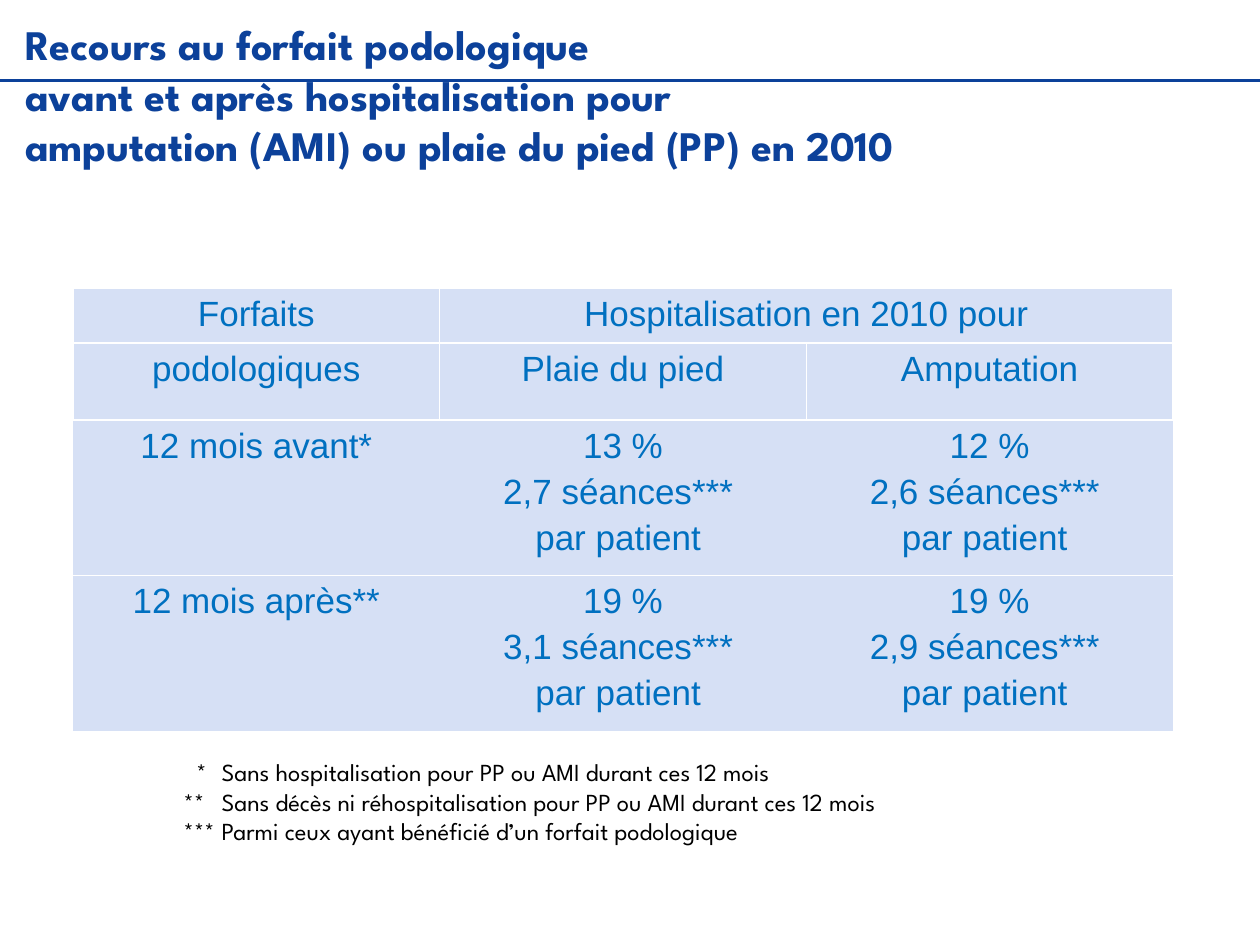
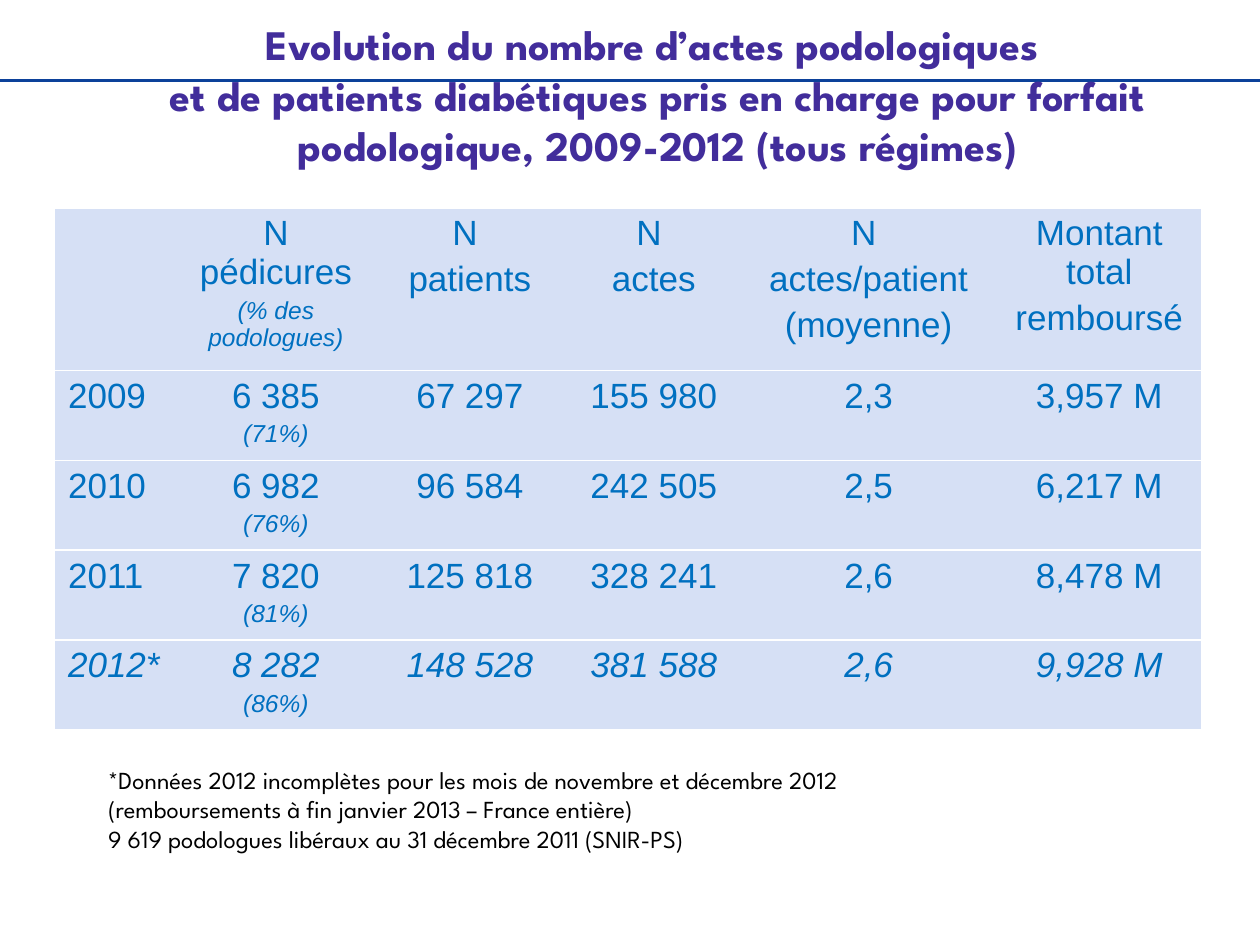
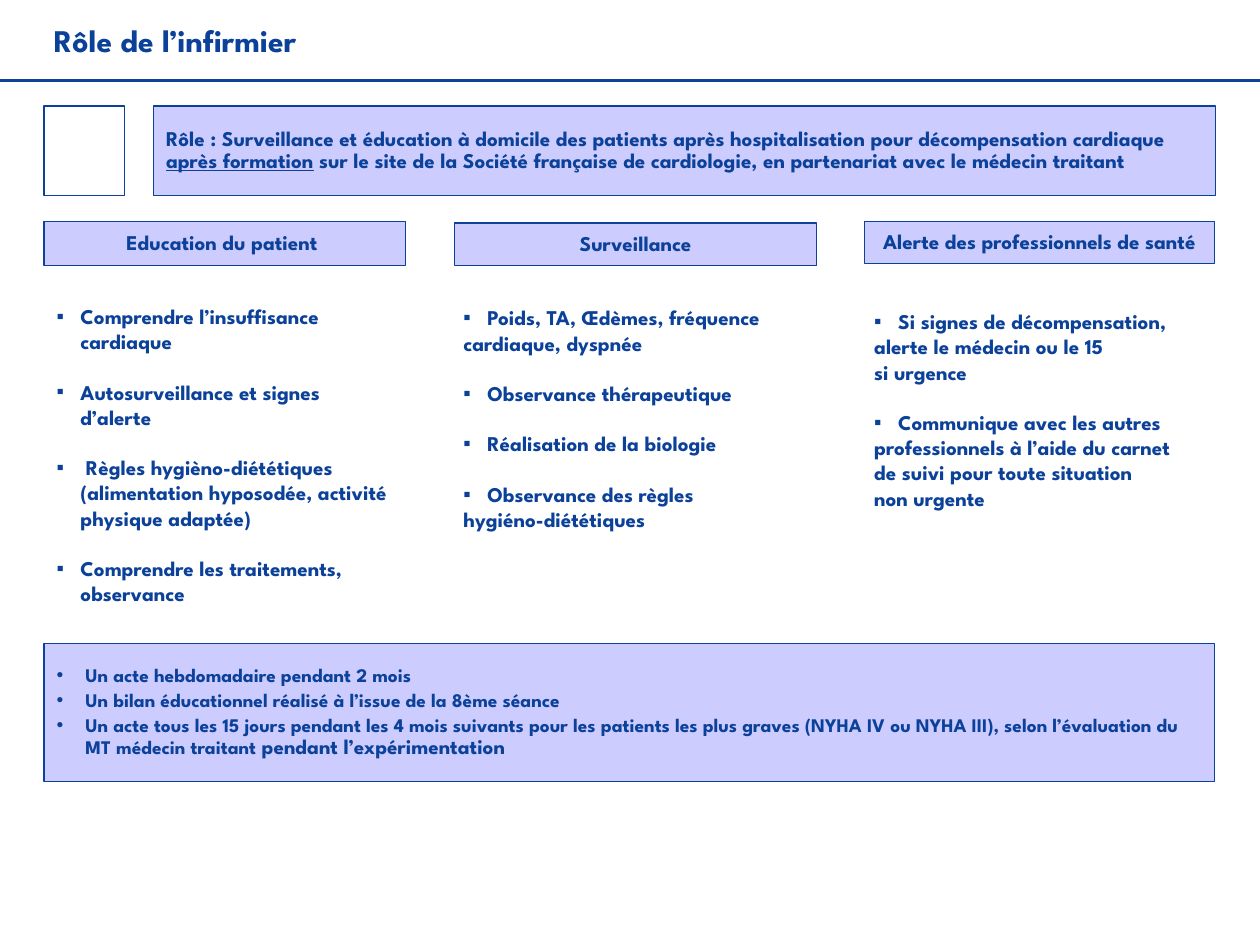
from dataclasses import dataclass, field

from lxml.etree import SubElement
from pptx import Presentation
from pptx.dml.color import RGBColor as Color
from pptx.enum.shapes import MSO_CONNECTOR as Connector
from pptx.enum.shapes import MSO_SHAPE as Preset
from pptx.enum.text import MSO_ANCHOR as Anchor
from pptx.enum.text import PP_ALIGN as Align
from pptx.oxml.ns import qn
from pptx.util import Inches, Pt

COLUMNS, ROWS = 100, 75
NO_GRID_STYLE = "{2D5ABB26-0587-4C30-8999-92F81FD0307C}"


@dataclass(frozen=True)
class Theme:
    navy: Color = Color.from_string("0C419A")
    violet: Color = Color.from_string("422D9B")
    blue: Color = Color.from_string("0070C0")
    pale: Color = Color.from_string("D6E0F5")
    lilac: Color = Color.from_string("CCCCFF")
    white: Color = Color.from_string("FFFFFF")
    black: Color = Color.from_string("000000")
    text_font: str = "League Spartan"
    table_font: str = "Arial"
    title: int = 24
    cell: int = 20
    heading: int = 18
    note: int = 14
    body: int = 12
    detail: int = 11


THEME = Theme()


@dataclass
class Line:
    runs: list
    format: dict = field(default_factory=dict)
    font: dict = field(default_factory=dict)
    indent: tuple = None
    bullet: str = None


def set_values(target, values):
    for name, value in values.items():
        setattr(target, name, value)


def font_style(size, color, name=THEME.text_font, **extra):
    return {"size": Pt(size), "name": name, "color": color, **extra}


BODY = font_style(THEME.body, THEME.navy, bold=True)
NOTE = font_style(THEME.note, THEME.black)
CELL = font_style(THEME.cell, THEME.blue, THEME.table_font)
SMALL = {"size": Pt(THEME.note), "italic": True}


class Deck:
    def __init__(self, theme):
        self.theme = theme
        self.presentation = Presentation()
        set_values(self.presentation, {"slide_width": Inches(10), "slide_height": Inches(7.5)})
        self.slide = None

    def across(self, columns):
        return round(self.presentation.slide_width * columns / COLUMNS)

    def down(self, rows):
        return round(self.presentation.slide_height * rows / ROWS)

    def place(self, left, top, width, height):
        return self.across(left), self.down(top), self.across(width), self.down(height)

    def new_slide(self):
        self.slide = self.presentation.slides.add_slide(self.presentation.slide_layouts[6])
        height = self.down(6.4)
        rule = self.slide.shapes.add_connector(Connector.STRAIGHT, 0, height, self.across(COLUMNS), height)
        rule.line.color.rgb = self.theme.navy
        rule.line.width = Pt(1.5)
        SubElement(rule._element.spPr, qn("a:effectLst"))

    def add_lines(self, frame, lines, style):
        for index, line in enumerate(lines):
            paragraph = frame.add_paragraph() if index else frame.paragraphs[0]
            set_values(paragraph, line.format)
            if line.indent:
                self.set_indent(paragraph, *line.indent, line.bullet)
            for text, change in line.runs:
                self.add_run(paragraph, text, {**style, **line.font, **change})

    def set_indent(self, paragraph, margin, first, bullet):
        properties = paragraph._p.get_or_add_pPr()
        properties.set("marL", str(self.across(margin)))
        properties.set("indent", str(self.across(first)))
        if bullet:
            SubElement(properties, qn("a:buFont")).set("typeface", self.theme.table_font)
            SubElement(properties, qn("a:buChar")).set("char", bullet)
        else:
            tabs = SubElement(properties, qn("a:tabLst"))
            stop = SubElement(tabs, qn("a:tab"))
            stop.set("pos", str(self.across(margin)))
            stop.set("algn", "l")

    def add_run(self, paragraph, text, style):
        for index, piece in enumerate(text.split("\n")):
            if index:
                paragraph.add_line_break()
            run = paragraph.add_run()
            run.text = piece
            set_values(run.font, {name: value for name, value in style.items() if name != "color"})
            run.font.color.rgb = style["color"]

    def text(self, box, lines, style, anchor=Anchor.TOP):
        shape = self.slide.shapes.add_textbox(*self.place(*box))
        set_values(shape.text_frame, {"word_wrap": True, "vertical_anchor": anchor})
        self.add_lines(shape.text_frame, lines, style)

    def panel(self, box, fill, lines=(), style=BODY):
        shape = self.slide.shapes.add_shape(Preset.RECTANGLE, *self.place(*box))
        shape.shadow.inherit = False
        shape.fill.solid()
        shape.fill.fore_color.rgb = fill
        shape.line.color.rgb = self.theme.navy
        shape.line.width = Pt(0.75)
        set_values(shape.text_frame, {"word_wrap": True, "vertical_anchor": Anchor.MIDDLE})
        self.add_lines(shape.text_frame, lines, style)

    def table(self, box, widths, heights, rows, borders):
        table = self.slide.shapes.add_table(len(rows), len(widths), *self.place(*box)).table
        set_values(table, {"first_row": False, "horz_banding": False})
        table._tbl.tblPr.find(qn("a:tableStyleId")).text = NO_GRID_STYLE
        for column, width in zip(table.columns, widths):
            column.width = self.across(width)
        for row, height in zip(table.rows, heights):
            row.height = self.down(height)
        for row_index, row in enumerate(rows):
            for column_index, lines in enumerate(row):
                cell = table.cell(row_index, column_index)
                self.add_borders(cell, borders[row_index])
                cell.fill.solid()
                cell.fill.fore_color.rgb = self.theme.pale
                self.add_lines(cell.text_frame, lines, CELL)
        return table

    def add_borders(self, cell, sides):
        properties = cell._tc.get_or_add_tcPr()
        for side in sides:
            border = SubElement(properties, qn(f"a:ln{side}"))
            border.set("w", str(int(Pt(1))))
            fill = SubElement(border, qn("a:solidFill"))
            SubElement(fill, qn("a:srgbClr")).set("val", str(self.theme.white))


def plain(text, **options):
    return Line([(text, {})], **options)


def cell_line(text, align=Align.CENTER, **font):
    size = font.get("size", CELL["size"])
    return plain(text, format={"alignment": align, "space_before": Pt(size.pt * 0.2)}, font=font)


def cell_lines(text):
    return [cell_line(part) for part in text.split("\n")] if text else []


def panel_line(*runs, align=Align.LEFT, **options):
    spacing = {"alignment": align, "line_spacing": 0.9, "space_before": Pt(THEME.body * 0.2)}
    return Line(list(runs), format=spacing, **options)


def bullet_lines(items):
    lines = []
    for index, item in enumerate(items):
        first, *others = item.split("\n")
        gap = {"space_before": Pt(THEME.body * 1.2)} if index else {}
        lines.append(plain(first, format=gap, indent=(1.9, -1.9), bullet="▪"))
        lines += [plain(other) for other in others]
    return lines


def build_package_use(deck):
    deck.new_slide()
    title = ("Recours au forfait podologique \navant et après hospitalisation pour \n"
             "amputation (AMI) ou plaie du pied (PP) en 2010")
    deck.text((1, 1, 98.9, 15.8), [plain(title)], font_style(THEME.title, THEME.navy, bold=True))
    content = [
        ["Forfaits", "Hospitalisation en 2010 pour", ""],
        ["podologiques", "Plaie du pied", "Amputation"],
        ["12 mois avant*", "13 %\n2,7 séances*** \npar patient ", "12 %\n2,6 séances*** \npar patient "],
        ["12 mois après**", "19 %\n3,1 séances*** \npar patient ", "19 %\n2,9 séances*** \npar patient "],
    ]
    rows = [[cell_lines(text) for text in row] for row in content]
    table = deck.table((5.8, 22.9, 87.3, 35.1), [29.1] * 3, [4.3, 6.1, 12.35, 12.35], rows,
                       ["LRTB", "LRTB", "T", ""])
    table.cell(0, 1).merge(table.cell(0, 2))
    notes = [
        ("*", "Sans hospitalisation pour PP ou AMI durant ces 12 mois", -2),
        ("**", "Sans décès ni réhospitalisation pour PP ou AMI durant ces 12 mois", -3),
        ("***", "Parmi ceux ayant bénéficié d’un forfait podologique", -3),
    ]
    lines = [plain(f"{mark}\t{note}", indent=(3, first)) for mark, note, first in notes]
    deck.text((13.6, 59.6, 79.5, 12.8), lines, NOTE)


def build_yearly_acts(deck):
    deck.new_slide()
    title = ("Evolution du nombre d’actes podologiques \net de patients diabétiques pris en charge "
             "pour forfait podologique, 2009-2012 (tous régimes)")
    deck.text((4.4, -4, 95.6, 23), [plain(title, format={"alignment": Align.CENTER})],
              font_style(THEME.title, THEME.violet, bold=True), Anchor.MIDDLE)
    headings = ["", "N pédicures\n(% des podologues)", "N \npatients", "N \nactes",
                "N \nactes/patient\n(moyenne)", "Montant total\nremboursé"]
    years = [
        ["2009", "6 385\n(71%)", "67 297", "155 980", "2,3", "3,957 M"],
        ["2010", "6 982\n(76%)", "96 584", "242 505", "2,5", "6,217 M"],
        ["2011", "7 820\n(81%)", "125 818", "328 241", "2,6", "8,478 M"],
        ["2012*", "8 282\n(86%)", "148 528", "381 588", "2,6", "9,928 M"],
    ]
    rows = []
    for values in [headings, *years]:
        year, pedicures, *others = values
        count, share = pedicures.split("\n")
        style = {"italic": True} if year.endswith("*") else {}
        rows.append([
            [cell_line(year, Align.LEFT, **style)] if year else [],
            [cell_line(count, **style), cell_line(share, **SMALL)],
            *[[cell_line(part, **style) for part in text.split("\n")] for text in others],
        ])
    deck.table((4.4, 16.5, 90.9, 41.4), [9.9, 15.2, 15.6, 13.6, 20.5, 16.1],
               [12.9] + [7.13] * 4, rows, ["TB"] * 5)
    notes = ["*Données 2012 incomplètes pour les mois de novembre et décembre 2012",
             "(remboursements à fin janvier 2013 – France entière)",
             "9 619 podologues libéraux au 31 décembre 2011 (SNIR-PS)"]
    deck.text((7.6, 60.2, 80.2, 10.4), [plain(note) for note in notes], NOTE)


def build_nurse_role(deck):
    deck.new_slide()
    deck.text((3.3, 1.2, 93.4, 4), [plain("Rôle de l’infirmier")],
              font_style(THEME.heading, THEME.navy, bold=True))
    deck.panel((3.5, 8.4, 6.4, 7.1), THEME.white)
    role = panel_line(
        ("Rôle : Surveillance et éducation à domicile des patients après hospitalisation "
         "pour décompensation cardiaque ", {}),
        ("après formation", {"underline": True}),
        (" sur le site de la Société française de cardiologie, en partenariat avec le médecin traitant", {}))
    deck.panel((12.2, 8.4, 84.3, 7.1), THEME.lilac, [role])
    missions = [
        ("Education du patient ", (3.5, 17.6, 28.7, 3.5), (3.5, 23.6, 28.8, 25), Anchor.TOP,
         ["Comprendre l’insuffisance cardiaque", "Autosurveillance et signes d’alerte",
          " Règles hygièno-diététiques (alimentation hyposodée, activité physique adaptée)",
          "Comprendre les traitements, observance"]),
        ("Surveillance", (36.1, 17.7, 28.7, 3.4), (35.8, 21.8, 28.3, 22.8), Anchor.MIDDLE,
         ["Poids, TA, Œdèmes, fréquence\ncardiaque, dyspnée", "Observance thérapeutique",
          "Réalisation de la biologie", "Observance des règles\nhygiéno-diététiques"]),
        ("Alerte des professionnels de santé", (68.6, 17.6, 27.8, 3.3), (68.4, 23.9, 28, 17.2), Anchor.MIDDLE,
         ["Si signes de décompensation,\nalerte le médecin ou le 15\nsi urgence",
          "Communique avec les autres\nprofessionnels à l’aide du carnet\n"
          "de suivi pour toute situation\nnon urgente"]),
    ]
    for heading, heading_box, list_box, anchor, items in missions:
        deck.panel(heading_box, THEME.lilac, [panel_line((heading, {}), align=Align.CENTER)])
        deck.text(list_box, bullet_lines(items), BODY, anchor)
    schedule = [
        [("Un acte hebdomadaire pendant 2 mois", {})],
        [("Un bilan éducationnel réalisé à l’issue de la 8ème séance", {})],
        [("Un acte tous les 15 jours pendant les 4 mois suivants pour les patients les plus graves "
          "(NYHA IV ou NYHA III), selon l’évaluation du MT médecin traitant ", {}),
         ("pendant l’expérimentation", {"size": Pt(THEME.body)})],
    ]
    deck.panel((3.5, 51.1, 92.9, 10.9), THEME.lilac,
               [panel_line(*runs, indent=(2.3, -2.3), bullet="•") for runs in schedule],
               font_style(THEME.detail, THEME.navy, bold=True))


def main():
    deck = Deck(THEME)
    build_package_use(deck)
    build_yearly_acts(deck)
    build_nurse_role(deck)
    deck.presentation.save("out.pptx")


if __name__ == "__main__":
    main()
